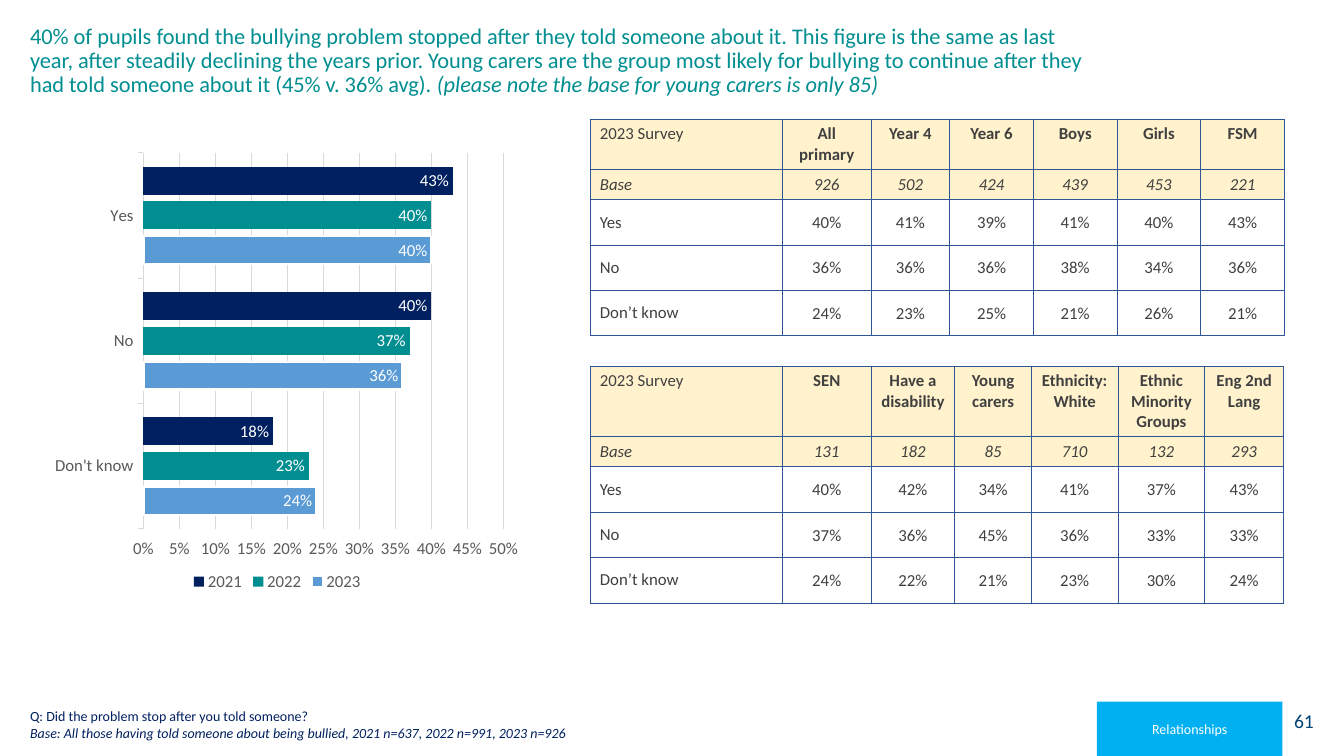
from dataclasses import dataclass
from typing import Any, NamedTuple

from lxml.etree import SubElement
from pptx import Presentation
from pptx.chart.data import CategoryChartData
from pptx.dml.color import RGBColor
from pptx.enum.chart import XL_CHART_TYPE, XL_LABEL_POSITION, XL_LEGEND_POSITION, XL_TICK_MARK
from pptx.enum.shapes import MSO_SHAPE
from pptx.enum.text import MSO_ANCHOR, PP_ALIGN
from pptx.oxml import parse_xml
from pptx.oxml.ns import nsdecls, qn
from pptx.util import Inches, Pt


@dataclass(frozen=True)
class Theme:
    font: str = "Calibri"
    teal: str = "008E91"
    navy: str = "002060"
    blue: str = "5B9BD5"
    sky: str = "00B0F0"
    page_blue: str = "004376"
    white: str = "FFFFFF"
    cream: str = "FFF2CC"
    border: str = "2F5597"
    table_text: str = "404040"
    axis_text: str = "595959"
    grid: str = "D9D9D9"
    title_size: float = 16
    page_size: float = 14
    body_size: float = 12
    small_size: float = 10


class Box(NamedTuple):
    left: float
    top: float
    width: float
    height: float

    def lengths(self) -> list[int]:
        return [Inches(v) for v in self]


class Run(NamedTuple):
    text: str
    italic: bool = False


class Label(NamedTuple):
    box: Box
    paragraphs: list[list[Run]]
    size: float
    color: str
    fill: str | None = None
    align: PP_ALIGN = PP_ALIGN.LEFT
    anchor: MSO_ANCHOR = MSO_ANCHOR.MIDDLE
    spacing: float = 1.0


class Survey(NamedTuple):
    box: Box
    widths: list[float]
    groups: list[str]
    bases: list[int]
    percents: list[list[int]]


class Year(NamedTuple):
    name: str
    values: list[float]
    color: str


THEME = Theme()
ROW_HEIGHTS = [0.45, 0.27, 0.45, 0.45, 0.45]
ANSWERS = ["Yes", "No", "Don’t know"]

PAGE = Label(Box(12.54, 6.95, 0.59, 0.4), [[Run("61")]], THEME.page_size, THEME.page_blue,
             THEME.white, PP_ALIGN.RIGHT)
QUESTION = Label(
    Box(0.2, 6.96, 11.19, 0.44),
    [[Run("Q: Did the problem stop after you told someone?")],
     [Run("Base: All those having told someone about being bullied, "
          "2021 n=637, 2022 n=991, 2023 n=926", True)]],
    THEME.small_size, THEME.navy, anchor=MSO_ANCHOR.BOTTOM)
TITLE = Label(
    Box(0.2, 0.2, 10.83, 0.98),
    [[Run("40% of pupils found the bullying problem stopped after they told someone about it. "
          "This figure is the same as last year, after steadily declining the years prior. "
          "Young carers are the group most likely for bullying to continue after they had told "
          "someone about it (45% v. 36% avg). "),
      Run("(please note the base for young carers is only 85)", True)]],
    THEME.title_size, THEME.teal, anchor=MSO_ANCHOR.TOP, spacing=0.9)
SECTION = Label(Box(10.88, 6.96, 1.84, 0.54), [[Run("Relationships")]], THEME.small_size,
                THEME.white, THEME.sky, PP_ALIGN.CENTER)

SURVEYS = [
    Survey(Box(5.85, 1.18, 6.87, 2.07), [1.91, 0.88, 0.78, 0.83, 0.83, 0.83, 0.83],
           ["All primary", "Year 4", "Year 6", "Boys", "Girls", "FSM"],
           [926, 502, 424, 439, 453, 221],
           [[40, 41, 39, 41, 40, 43], [36, 36, 36, 38, 34, 36], [24, 23, 25, 21, 26, 21]]),
    Survey(Box(5.85, 3.63, 6.87, 2.07), [1.91, 0.88, 0.83, 0.76, 0.86, 0.86, 0.78],
           ["SEN", "Have a disability", "Young carers", "Ethnicity: White",
            "Ethnic Minority Groups", "Eng 2nd Lang"],
           [131, 182, 85, 710, 132, 293],
           [[40, 42, 34, 41, 37, 43], [37, 36, 45, 36, 33, 33], [24, 22, 21, 23, 30, 24]]),
]

CHART_BOX = Box(-0.11, 1.18, 5.72, 4.73)
PLOT_AREA = {"x": 0.268, "y": 0.071, "w": 0.624, "h": 0.789}
CATEGORIES = ["Don't know", "No", "Yes"]
YEARS = [Year("2023", [0.24, 0.36, 0.4], THEME.blue),
         Year("2022", [0.23, 0.37, 0.4], THEME.teal),
         Year("2021", [0.18, 0.4, 0.43], THEME.navy)]


def apply(target: Any, values: dict[str, Any]) -> None:
    for name, value in values.items():
        setattr(target, name, value)


def set_font(font: Any, size: float, color: str, **extra: bool) -> None:
    apply(font, {"name": THEME.font, "size": Pt(size), **extra})
    font.color.rgb = RGBColor.from_string(color)


def set_fill(fill: Any, color: str | None) -> None:
    if color is None:
        fill.background()
    else:
        fill.solid()
        fill.fore_color.rgb = RGBColor.from_string(color)


def set_line(line: Any, color: str, width: float) -> None:
    line.width = Pt(width)
    set_fill(line.fill, color)


def add_label(slide: Any, label: Label) -> None:
    if label.fill:
        sp = slide.shapes.add_shape(MSO_SHAPE.RECTANGLE, *label.box.lengths())
        sp.shadow.inherit = False
        set_fill(sp.fill, label.fill)
        sp.line.fill.background()
    else:
        sp = slide.shapes.add_textbox(*label.box.lengths())
    tf = sp.text_frame
    apply(tf, {"word_wrap": True, "vertical_anchor": label.anchor})
    for i, runs in enumerate(label.paragraphs):
        p = tf.add_paragraph() if i else tf.paragraphs[0]
        apply(p, {"alignment": label.align, "line_spacing": label.spacing})
        for run in runs:
            r = p.add_run()
            r.text = run.text
            set_font(r.font, label.size, label.color, italic=run.italic)


def add_borders(cell: Any) -> None:
    tc_pr = cell._tc.get_or_add_tcPr()
    for side in ("lnL", "lnR", "lnT", "lnB"):
        ln = SubElement(tc_pr, qn(f"a:{side}"), w=str(Pt(0.5)))
        SubElement(SubElement(ln, qn("a:solidFill")), qn("a:srgbClr"), val=THEME.border)


def add_survey(slide: Any, survey: Survey) -> None:
    rows = [["2023 Survey", *survey.groups], ["Base", *map(str, survey.bases)]]
    rows += [[answer, *(f"{v}%" for v in values)]
             for answer, values in zip(ANSWERS, survey.percents)]
    table = slide.shapes.add_table(len(rows), len(rows[0]), *survey.box.lengths()).table
    apply(table, {"first_row": False, "horz_banding": False})
    for column, width in zip(table.columns, survey.widths):
        column.width = Inches(width)
    for i, (texts, height) in enumerate(zip(rows, ROW_HEIGHTS)):
        table.rows[i].height = Inches(height)
        for j, text in enumerate(texts):
            cell = table.cell(i, j)
            cell.vertical_anchor = MSO_ANCHOR.MIDDLE if i else MSO_ANCHOR.TOP
            if i > 1 and j:
                tight = Inches(0.01)
                apply(cell, {"margin_left": tight, "margin_top": tight,
                             "margin_right": tight, "margin_bottom": 0})
            add_borders(cell)
            set_fill(cell.fill, THEME.cream if i < 2 else None)
            p = cell.text_frame.paragraphs[0]
            p.alignment = PP_ALIGN.CENTER if j else PP_ALIGN.LEFT
            r = p.add_run()
            r.text = text
            set_font(r.font, THEME.body_size, THEME.table_text, bold=i == 0 and j > 0, italic=i == 1)


def add_year_chart(slide: Any) -> None:
    data = CategoryChartData(number_format="0%")
    data.categories = CATEGORIES
    for year in YEARS:
        data.add_series(year.name, year.values)
    chart = slide.shapes.add_chart(XL_CHART_TYPE.BAR_CLUSTERED, *CHART_BOX.lengths(), data).chart
    set_font(chart.font, THEME.small_size, "000000")
    apply(chart, {"has_title": False, "has_legend": True})
    apply(chart.legend, {"position": XL_LEGEND_POSITION.BOTTOM, "include_in_layout": False})
    cat_axis, val_axis = chart.category_axis, chart.value_axis
    apply(val_axis, {"minimum_scale": 0, "maximum_scale": 0.5, "major_unit": 0.05})
    apply(val_axis.tick_labels, {"number_format": "0%", "number_format_is_linked": False})
    for axis in (cat_axis, val_axis):
        axis.major_tick_mark = XL_TICK_MARK.OUTSIDE
    for font in (cat_axis.tick_labels.font, val_axis.tick_labels.font, chart.legend.font):
        set_font(font, THEME.body_size, THEME.axis_text)
    for line in (cat_axis.format.line, val_axis.major_gridlines.format.line):
        set_line(line, THEME.grid, 0.75)
    val_axis.format.line.fill.background()

    plot = chart.plots[0]
    apply(plot, {"gap_width": 100, "overlap": -25, "vary_by_categories": False})
    for series, year in zip(plot.series, YEARS):
        set_fill(series.format.fill, year.color)
        labels = series.data_labels
        apply(labels, {"show_value": True, "position": XL_LABEL_POSITION.INSIDE_END,
                       "number_format": "0%", "number_format_is_linked": False})
        set_font(labels.font, THEME.body_size, THEME.white)
    set_line(plot.series[0].format.line, THEME.white, 1.5)

    area = chart._chartSpace.chart.plotArea
    for old in area.findall(qn("c:layout")):
        area.remove(old)
    modes = '<c:layoutTarget val="inner"/><c:xMode val="edge"/><c:yMode val="edge"/>'
    sizes = "".join(f'<c:{k} val="{v}"/>' for k, v in PLOT_AREA.items())
    area.insert(0, parse_xml(f'<c:layout {nsdecls("c")}><c:manualLayout>{modes}{sizes}'
                             "</c:manualLayout></c:layout>"))


def main() -> None:
    prs = Presentation()
    apply(prs, {"slide_width": Inches(13.33), "slide_height": Inches(7.5)})
    slide = prs.slides.add_slide(prs.slide_layouts[6])
    for label in (PAGE, QUESTION, TITLE, SECTION):
        add_label(slide, label)
    for survey in SURVEYS:
        add_survey(slide, survey)
    add_year_chart(slide)
    prs.save("out.pptx")


if __name__ == "__main__":
    main()
